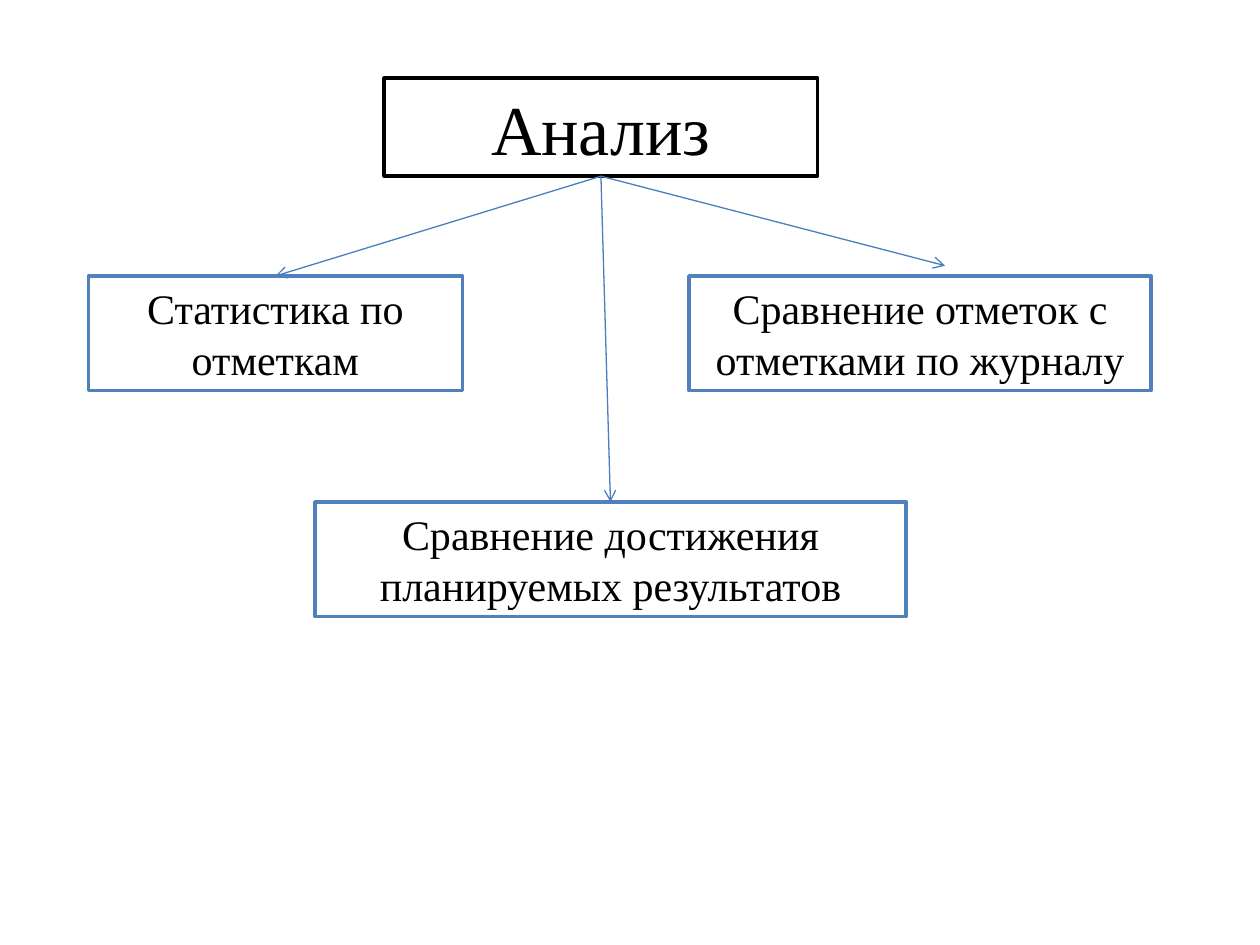
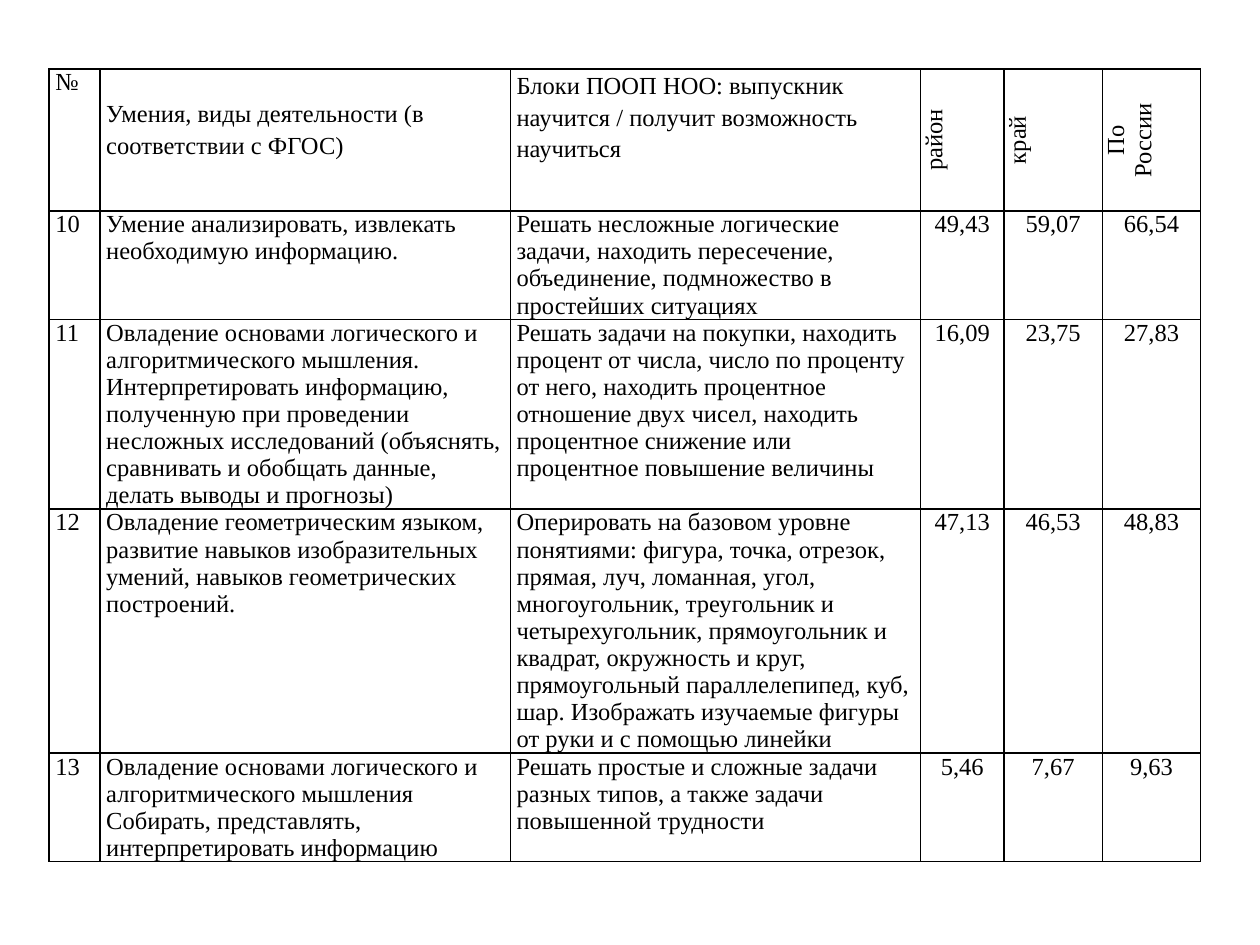
"""Builds two slides: a scheme of the analysis and a table of skills with results."""
from dataclasses import dataclass

import lxml.etree
import pptx
import pptx.dml.color
import pptx.enum.shapes
import pptx.enum.text
import pptx.oxml
import pptx.oxml.ns
import pptx.util

Pt = pptx.util.Pt
Align = pptx.enum.text.PP_ALIGN
qn = pptx.oxml.ns.qn


@dataclass(frozen=True)
class Theme:
    font: str = "Times New Roman"
    ink: str = "000000"
    paper: str = "FFFFFF"
    frame: str = "4F81BD"
    arrow: str = "4B7EBC"
    title_size: int = 40
    box_size: int = 24
    table_size: int = 14
    frame_width: float = 2
    arrow_width: float = 0.75
    rule_width: float = 1


def rgb(value):
    return pptx.dml.color.RGBColor.from_string(value)


class Deck:
    def __init__(self, theme):
        self.theme = theme
        self.presentation = pptx.Presentation()
        self.presentation.slide_width = Pt(720)
        self.presentation.slide_height = Pt(540)
        self.slide = None

    def start_slide(self, layout_name):
        layout = self.presentation.slide_layouts.get_by_name(layout_name)
        self.slide = self.presentation.slides.add_slide(layout)

    def set_text(self, frame, text, size, align):
        frame.text = text
        for paragraph in frame.paragraphs:
            paragraph.alignment = align
            for run in paragraph.runs:
                run.font.name = self.theme.font
                run.font.size = Pt(size)
                run.font.color.rgb = rgb(self.theme.ink)

    def frame_text(self, box, text, size, line_color):
        box.fill.solid()
        box.fill.fore_color.rgb = rgb(self.theme.paper)
        box.line.color.rgb = rgb(line_color)
        box.line.width = Pt(self.theme.frame_width)
        frame = box.text_frame
        frame.word_wrap = True
        frame.auto_size = pptx.enum.text.MSO_AUTO_SIZE.NONE
        frame.vertical_anchor = pptx.enum.text.MSO_ANCHOR.MIDDLE
        self.set_text(frame, text, size, Align.CENTER)

    def title(self, text, left, top, width, height):
        heading = self.slide.shapes.title
        heading.left, heading.top = Pt(left), Pt(top)
        heading.width, heading.height = Pt(width), Pt(height)
        self.frame_text(heading, text, self.theme.title_size, self.theme.ink)

    def box(self, text, left, top, width, height):
        shape = self.slide.shapes.add_shape(
            pptx.enum.shapes.MSO_SHAPE.RECTANGLE,
            Pt(left), Pt(top), Pt(width), Pt(height))
        shape.shadow.inherit = False
        self.frame_text(shape, text, self.theme.box_size, self.theme.frame)
        return shape

    def arrow(self, start, end, target=None):
        connector = self.slide.shapes.add_connector(
            pptx.enum.shapes.MSO_CONNECTOR.STRAIGHT,
            *(Pt(length) for length in (*start, *end)))
        if target is not None:
            connector.end_connect(target, 0)
        connector.line.color.rgb = rgb(self.theme.arrow)
        connector.line.width = Pt(self.theme.arrow_width)
        properties = connector._element.spPr
        outline = properties.find(qn("a:ln"))
        lxml.etree.SubElement(outline, qn("a:tailEnd"), type="arrow")
        lxml.etree.SubElement(properties, qn("a:effectLst"))

    def rule_cell(self, cell):
        properties = cell._tc.get_or_add_tcPr()
        for side in ("lnL", "lnR", "lnT", "lnB"):
            edge = lxml.etree.SubElement(
                properties, qn(f"a:{side}"), w=str(Pt(self.theme.rule_width)))
            fill = lxml.etree.SubElement(edge, qn("a:solidFill"))
            lxml.etree.SubElement(fill, qn("a:srgbClr"), val=self.theme.ink)
        cell.fill.background()

    def turn_cell(self, cell, indent):
        cell._tc.get_or_add_tcPr().set("vert", "vert270")
        for paragraph in cell.text_frame.paragraphs:
            properties = paragraph._p.get_or_add_pPr()
            for margin in ("marL", "marR"):
                properties.set(margin, str(Pt(indent)))

    def table(self, rows, left, top, widths, heights, first_number_column):
        table = self.slide.shapes.add_table(
            len(rows), len(widths), Pt(left), Pt(top),
            Pt(sum(widths)), Pt(sum(heights))).table
        table.first_row = table.horz_banding = False
        for column, width in zip(table.columns, widths):
            column.width = Pt(width)
        for row, height in zip(table.rows, heights):
            row.height = Pt(height)
        for row_index, texts in enumerate(rows):
            for column_index, text in enumerate(texts):
                cell = table.cell(row_index, column_index)
                cell.margin_left = cell.margin_right = Pt(3.6)
                cell.margin_top = cell.margin_bottom = 0
                centred = column_index >= first_number_column
                self.set_text(cell.text_frame, text, self.theme.table_size,
                              Align.CENTER if centred else Align.LEFT)
                self.rule_cell(cell)
        return table


SKILL_ROWS = [
    ("№", "Умения, виды деятельности (в соответствии с ФГОС)",
     "Блоки ПООП НОО: выпускник научится / получит возможность научиться",
     "район", "край", "По России"),
    ("10", "Умение анализировать, извлекать необходимую информацию.",
     "Решать несложные логические задачи, находить пересечение, "
     "объединение, подмножество в простейших ситуациях",
     "49,43", "59,07", "66,54"),
    ("11", "Овладение основами логического и алгоритмического мышления. "
     "Интерпретировать информацию, полученную при проведении несложных "
     "исследований (объяснять, сравнивать и обобщать данные, "
     "делать выводы и прогнозы)",
     "Решать задачи на покупки, находить процент от числа, число по "
     "проценту от него, находить процентное отношение двух чисел, "
     "находить процентное снижение или процентное повышение величины",
     "16,09", "23,75", "27,83"),
    ("12", "Овладение геометрическим языком, развитие навыков "
     "изобразительных умений, навыков геометрических построений.",
     "Оперировать на базовом уровне понятиями: фигура, точка, отрезок, "
     "прямая, луч, ломанная, угол, многоугольник, треугольник и "
     "четырехугольник, прямоугольник и квадрат, окружность и круг, "
     "прямоугольный параллелепипед, куб, шар. Изображать изучаемые "
     "фигуры от руки и с помощью линейки",
     "47,13", "46,53", "48,83"),
    ("13", "Овладение основами логического и алгоритмического мышления\n"
     "Собирать, представлять, интерпретировать информацию",
     "Решать простые и сложные задачи разных типов, "
     "а также задачи повышенной трудности",
     "5,46", "7,67", "9,63"),
]


def build_analysis(deck):
    deck.start_slide("Title Only")
    deck.title("Анализ", 219.5, 44.7, 247.7, 55.8)
    height = 65.5
    statistics = deck.box("Статистика по отметкам", 50.5, 157.7, 213.8, height)
    achievement = deck.box("Сравнение достижения планируемых результатов",
                           180, 286.8, 337.7, height)
    deck.box("Сравнение отметок с отметками по журналу",
             393.7, 157.7, 264.2, height)
    analysis_foot = (343.4, 100.7)
    deck.arrow(analysis_foot, (157.4, 157.7), statistics)
    deck.arrow(analysis_foot, (540, 151.8))
    deck.arrow(analysis_foot, (348.9, 286.8), achievement)


def build_skills(deck):
    deck.start_slide("Blank")
    skills = deck.table(
        SKILL_ROWS, 28.1, 39.5,
        widths=(29, 234.5, 234.5, 47.7, 56.2, 56.2),
        heights=(78.5, 62, 108.3, 139.5, 62), first_number_column=3)
    for column in (1, 2):
        skills.cell(0, column).text_frame.paragraphs[0].line_spacing = 1.15
    skills.cell(0, 1).margin_top = Pt(16)
    for column in (3, 4, 5):
        deck.turn_cell(skills.cell(0, column), indent=9)


def main():
    deck = Deck(Theme())
    build_analysis(deck)
    build_skills(deck)
    deck.presentation.save("out.pptx")


if __name__ == "__main__":
    main()
